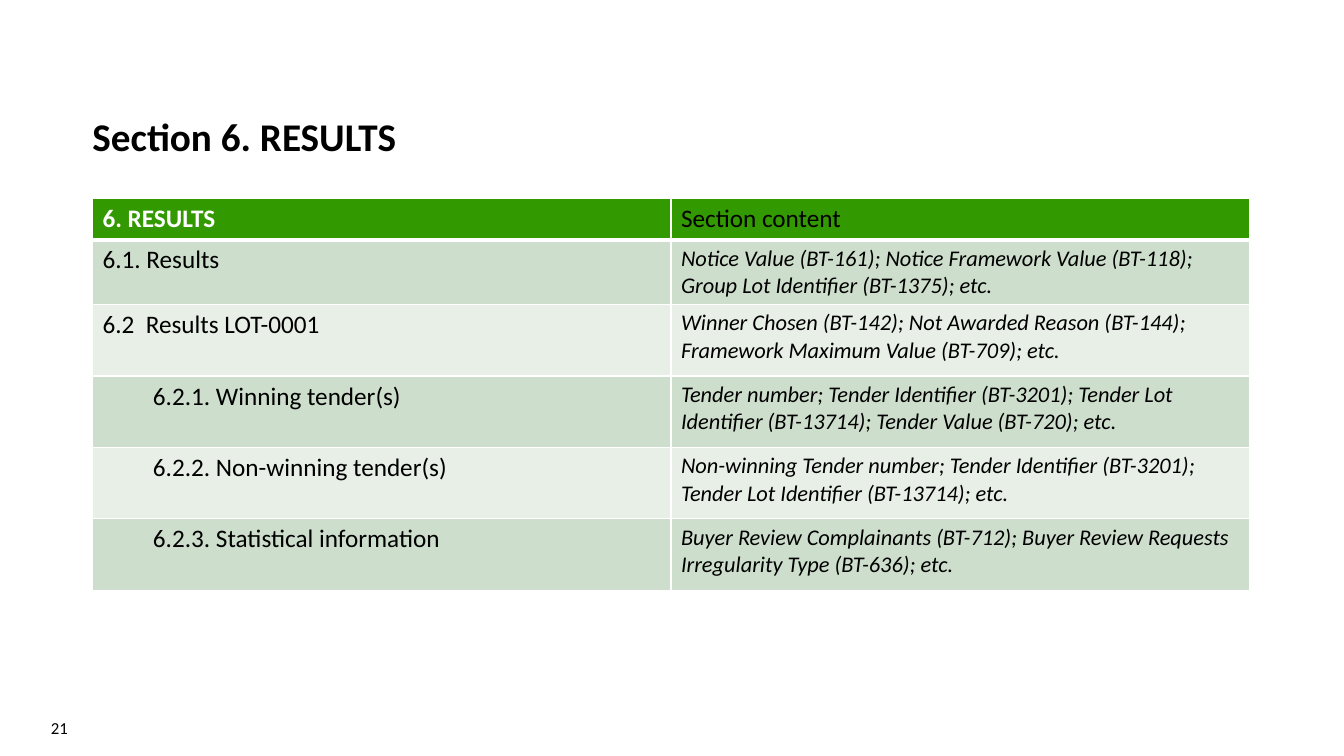
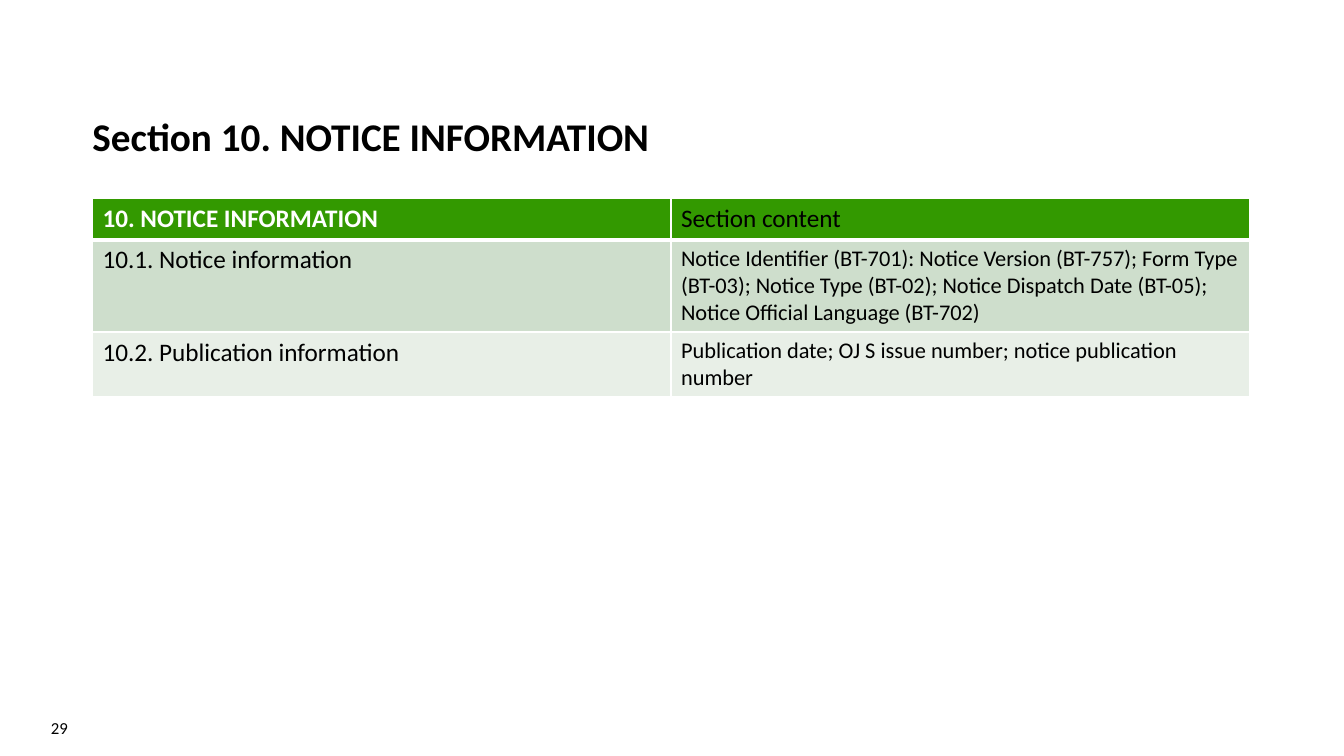
"""Build two slides that list the contents of notice sections."""
from dataclasses import dataclass

from lxml import etree
from pptx import Presentation
from pptx import util as u
from pptx.dml.color import RGBColor
from pptx.enum import text
from pptx.oxml.ns import qn
from pptx.slide import Slide
from pptx.table import _Cell

BLACK = RGBColor(0x00, 0x00, 0x00)
WHITE = RGBColor(0xFF, 0xFF, 0xFF)
HEADER_GREEN = RGBColor(0x33, 0x99, 0x00)
BANDS = (RGBColor(0xCE, 0xDE, 0xCC), RGBColor(0xE8, 0xEF, 0xE7))
FONT = "Calibri"
LEFT, WIDTH = u.Cm(2.33), u.Cm(29.16)
TABLE_TOP = u.Cm(5)
HEADER_HEIGHT = u.Cm(1.04)
INDENT = u.Cm(1.27)
THIN, THICK = u.Pt(1), u.Pt(3)


@dataclass(frozen=True)
class Entry:
    """One table row: a section part, its content and its height."""
    label: str
    content: str
    height: u.Length = u.Cm(1.8)
    level: int = 0


@dataclass(frozen=True)
class Section:
    """One slide: title, table heading, entries and page number."""
    title: str
    heading: str
    entries: tuple[Entry, ...]
    number: int
    italic: bool = False


SECTIONS = (
    Section("Section 6. RESULTS", "6. RESULTS", (
        Entry("6.1. Results",
              "Notice Value (BT-161); Notice Framework Value (BT-118); "
              "Group Lot Identifier (BT-1375); etc.", u.Cm(1.63)),
        Entry("6.2  Results LOT-0001",
              "Winner Chosen (BT-142); Not Awarded Reason (BT-144); "
              "Framework Maximum Value (BT-709); etc."),
        Entry("6.2.1. Winning tender(s)",
              "Tender number; Tender Identifier (BT-3201); Tender Lot "
              "Identifier (BT-13714); Tender Value (BT-720); etc.", level=1),
        Entry("6.2.2. Non-winning tender(s)",
              "Non-winning Tender number; Tender Identifier (BT-3201); "
              "Tender Lot Identifier (BT-13714); etc.", level=1),
        Entry("6.2.3. Statistical information",
              "Buyer Review Complainants (BT-712); Buyer Review Requests "
              "Irregularity Type (BT-636); etc.", level=1),
    ), 21, italic=True),
    Section("Section 10. NOTICE INFORMATION", "10. NOTICE INFORMATION", (
        Entry("10.1. Notice information",
              "Notice Identifier (BT-701): Notice Version (BT-757); Form Type "
              "(BT-03); Notice Type (BT-02); Notice Dispatch Date (BT-05); "
              "Notice Official Language (BT-702)", u.Cm(2.32)),
        Entry("10.2. Publication information",
              "Publication date; OJ S issue number; notice publication number",
              u.Cm(1.63)),
    ), 29),
)


def style_paragraph(paragraph: text, size: float, color: RGBColor = BLACK,
                    bold: bool = False, italic: bool = False) -> None:
    """Set the font of a whole paragraph."""
    font = paragraph.font
    font.name, font.size, font.bold, font.italic = FONT, u.Pt(size), bold, italic
    font.color.rgb = color


def set_borders(cell: _Cell, top: u.Length, bottom: u.Length) -> None:
    """Draw white lines around a cell."""
    properties = cell._tc.get_or_add_tcPr()
    for side, width in (("L", THIN), ("R", THIN), ("T", top), ("B", bottom)):
        line = etree.SubElement(properties, qn(f"a:ln{side}"), w=str(int(width)))
        fill = etree.SubElement(line, qn("a:solidFill"))
        etree.SubElement(fill, qn("a:srgbClr"), val=str(WHITE))


def fill_cell(cell: _Cell, wording: str, fill: RGBColor, size: float,
              color: RGBColor = BLACK, bold: bool = False, italic: bool = False,
              level: int = 0, top: u.Length = THIN, bottom: u.Length = THIN) -> None:
    """Write and format one table cell."""
    set_borders(cell, top, bottom)
    cell.fill.solid()
    cell.fill.fore_color.rgb = fill
    cell.text = wording
    paragraph = cell.text_frame.paragraphs[0]
    if level:
        paragraph.level = level
        paragraph._p.get_or_add_pPr().set("marL", str(int(INDENT * level)))
    style_paragraph(paragraph, size, color, bold, italic)


def add_title(slide: Slide, wording: str) -> None:
    """Place the section title in the title placeholder."""
    title = slide.shapes.title
    title.left, title.top, title.width, title.height = LEFT, u.Cm(0.36), WIDTH, u.Cm(3.68)
    frame = title.text_frame
    frame.text = wording
    frame.auto_size = text.MSO_AUTO_SIZE.NONE
    frame.vertical_anchor = text.MSO_ANCHOR.BOTTOM
    frame.margin_left = frame.margin_right = frame.margin_bottom = 0
    frame.margin_top = u.Cm(0.13)
    paragraph = frame.paragraphs[0]
    paragraph.alignment = text.PP_ALIGN.LEFT
    paragraph.line_spacing = 0.9
    style_paragraph(paragraph, 28, bold=True)


def add_section_table(slide: Slide, section: Section) -> None:
    """Add the two-column table of a section."""
    height = HEADER_HEIGHT + sum(entry.height for entry in section.entries)
    table = slide.shapes.add_table(
        len(section.entries) + 1, 2, LEFT, TABLE_TOP, WIDTH, height).table
    table.horz_banding = False
    table.rows[0].height = HEADER_HEIGHT
    fill_cell(table.cell(0, 0), section.heading, HEADER_GREEN, 18, WHITE,
              bold=True, bottom=THICK)
    fill_cell(table.cell(0, 1), "Section content", HEADER_GREEN, 18, bottom=THICK)
    for index, entry in enumerate(section.entries):
        row = index + 1
        band = BANDS[index % len(BANDS)]
        top = THIN if index else THICK
        table.rows[row].height = entry.height
        fill_cell(table.cell(row, 0), entry.label, band, 18, level=entry.level, top=top)
        fill_cell(table.cell(row, 1), entry.content, band, 16,
                  italic=section.italic, top=top)


def add_page_number(slide: Slide, number: int) -> None:
    """Add the page number at the bottom left."""
    box = slide.shapes.add_textbox(0, u.Cm(17.83), u.Cm(1.96), u.Cm(1.02))
    frame = box.text_frame
    frame.word_wrap = True
    frame.vertical_anchor = text.MSO_ANCHOR.MIDDLE
    frame.text = str(number)
    paragraph = frame.paragraphs[0]
    paragraph.alignment = text.PP_ALIGN.RIGHT
    style_paragraph(paragraph, 12)


def main() -> None:
    """Build and save the presentation."""
    presentation = Presentation()
    presentation.slide_width, presentation.slide_height = u.Cm(33.87), u.Cm(19.05)
    for section in SECTIONS:
        slide = presentation.slides.add_slide(presentation.slide_layouts[5])
        add_title(slide, section.title)
        add_section_table(slide, section)
        add_page_number(slide, section.number)
    presentation.save("out.pptx")


if __name__ == "__main__":
    main()
